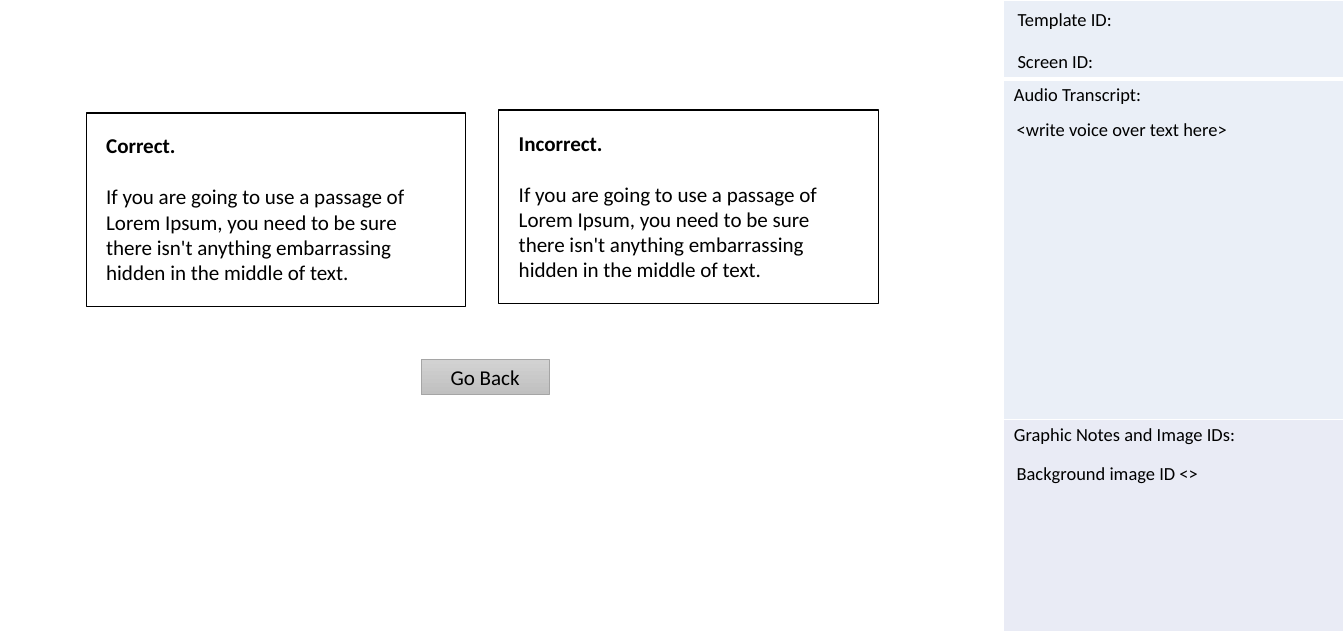
from lxml.etree import SubElement
from pptx import Presentation
from pptx.dml.color import RGBColor
from pptx.enum.shapes import MSO_SHAPE
from pptx.enum.text import MSO_ANCHOR, PP_ALIGN
from pptx.oxml.ns import qn
from pptx.util import Inches, Pt

WIDTH, HEIGHT = 14.17, 6.69
BLACK = RGBColor(0x00, 0x00, 0x00)
WHITE = RGBColor(0xFF, 0xFF, 0xFF)
PALE_BLUE = RGBColor(0xEA, 0xEF, 0xF7)
LAVENDER = RGBColor(0xE9, 0xEB, 0xF5)
LIGHT_GREY = RGBColor(0xD2, 0xD2, 0xD2)
MID_GREY = RGBColor(0xC0, 0xC0, 0xC0)
EDGE_GREY = RGBColor(0xA5, 0xA5, 0xA5)

ADVICE = ("If you are going to use a passage of Lorem Ipsum, you need to be sure "
          "there isn't anything embarrassing hidden in the middle of text.")
FEEDBACK = [("Correct.", 0.91, 1.19), ("Incorrect.", 5.26, 1.16)]
FEEDBACK_SIZE = (4, 2.04)
BUTTON = ("Go Back", (4.44, 3.79, 1.35, 0.37))
PANEL_LEFT = 10.58
PANEL_WIDTH = WIDTH - PANEL_LEFT
PANEL_ROWS = [
    ("", 0.83, PALE_BLUE),
    ("Audio Transcript:", 3.59, PALE_BLUE),
    ("Graphic Notes and Image IDs:", 2.23, LAVENDER),
]
LABELS = [
    ("Screen ID:", 10.63, 0.48),
    ("Template ID:", 10.63, 0.04),
    ("<write voice over text here>", 10.62, 1.19),
    ("Background image ID <>", 10.62, 4.82),
]


def write(frame, lines, size=14, bold_first=False, align=PP_ALIGN.LEFT,
          anchor=MSO_ANCHOR.TOP, insets=(0.1, 0.05), gap=0):
    frame.word_wrap = True
    frame.vertical_anchor = anchor
    frame.margin_left = frame.margin_right = Inches(insets[0])
    frame.margin_top = frame.margin_bottom = Inches(insets[1])
    for index, line in enumerate(lines):
        para = frame.add_paragraph() if index else frame.paragraphs[0]
        para.alignment = align
        para.space_before = Pt(gap if index else 0)
        span = para.add_run()
        span.text = line
        span.font.name = "Calibri"
        span.font.size = Pt(size)
        span.font.bold = bold_first and index == 0
        span.font.color.rgb = BLACK


def add_box(page, bounds, edge, weight):
    box = page.shapes.add_shape(MSO_SHAPE.RECTANGLE, *map(Inches, bounds))
    box.shadow.inherit = False
    box.line.color.rgb = edge
    box.line.width = Pt(weight)
    return box


def add_border(cell, side, weight):
    line = SubElement(cell._tc.get_or_add_tcPr(), qn(f"a:ln{side}"), w=str(Pt(weight)))
    fill = SubElement(line, qn("a:solidFill"))
    SubElement(fill, qn("a:srgbClr"), val=str(WHITE))


def add_panel(page):
    total = sum(height for _, height, _ in PANEL_ROWS)
    bounds = map(Inches, (PANEL_LEFT, 0, PANEL_WIDTH, total))
    table = page.shapes.add_table(len(PANEL_ROWS), 1, *bounds).table
    for index, (text, height, color) in enumerate(PANEL_ROWS):
        table.rows[index].height = Inches(height)
        cell = table.cell(index, 0)
        weights = {"L": 1, "R": 1, "T": 3 if index == 1 else 1, "B": 3 if index == 0 else 1}
        for side, weight in weights.items():
            add_border(cell, side, weight)
        cell.fill.solid()
        cell.fill.fore_color.rgb = color
        cell.margin_left = cell.margin_right = Inches(0.11)
        if text:
            write(cell.text_frame, [text])


def main():
    deck = Presentation()
    deck.slide_width, deck.slide_height = Inches(WIDTH), Inches(HEIGHT)
    page = deck.slides.add_slide(deck.slide_layouts[6])
    add_panel(page)

    for text, left, top in LABELS:
        bounds = map(Inches, (left, top, WIDTH - left, 0.34))
        write(page.shapes.add_textbox(*bounds).text_frame, [text])

    for verdict, left, top in FEEDBACK:
        box = add_box(page, (left, top, *FEEDBACK_SIZE), BLACK, 1)
        box.fill.solid()
        box.fill.fore_color.rgb = WHITE
        write(box.text_frame, [verdict, ADVICE], size=16, bold_first=True,
              insets=(0.21, 0.21), gap=19.5)

    text, bounds = BUTTON
    button = add_box(page, bounds, EDGE_GREY, 0.5)
    button.fill.gradient()
    button.fill.gradient_angle = 270
    for stop, color in zip(button.fill.gradient_stops, (LIGHT_GREY, MID_GREY)):
        stop.color.rgb = color
    write(button.text_frame, [text], size=16, align=PP_ALIGN.CENTER,
          anchor=MSO_ANCHOR.MIDDLE, insets=(0, 0.05))

    deck.save("out.pptx")


if __name__ == "__main__":
    main()
